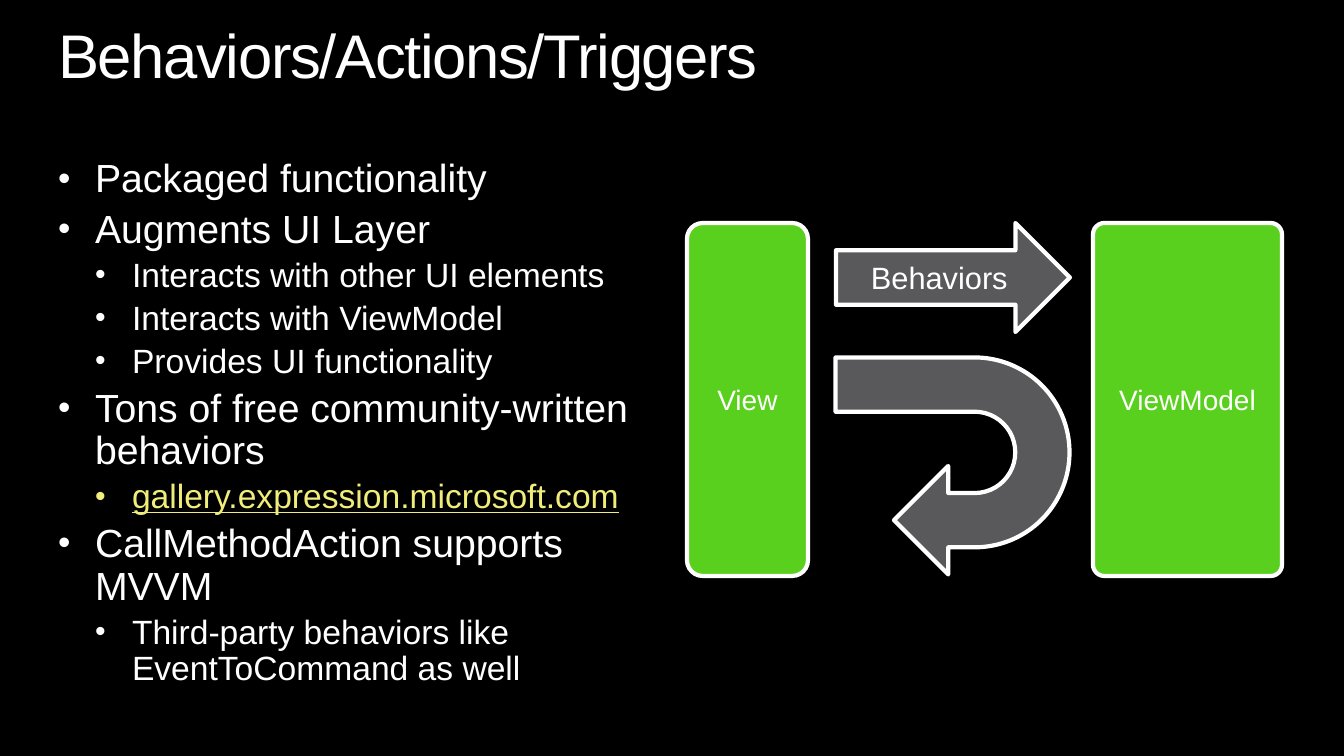
from dataclasses import dataclass

from lxml.etree import SubElement
from pptx import Presentation
from pptx.dml.color import RGBColor as Color
from pptx.enum.shapes import MSO_SHAPE as Shape
from pptx.enum.text import MSO_ANCHOR as Anchor, MSO_AUTO_SIZE as Fit, PP_ALIGN as Align
from pptx.oxml.ns import qn
from pptx.util import Emu, Pt


@dataclass(frozen=True)
class Theme:
    font: str = "Arial"
    back: str = "000000"
    text: str = "FFFFFF"
    link: str = "F0ED7B"
    layer: str = "59D01E"
    arrow: str = "59585A"
    title_size: int = 44
    list_sizes: tuple = (28, 24)
    layer_size: int = 20
    arrow_size: int = 22
    outline: int = 3


def px(length):
    return Emu(round(length * 914400 / 100.8))


def apply(target, values):
    for name, value in values.items():
        setattr(target, name, value)


class SlideBuilder:
    def __init__(self, deck, theme):
        self.theme = theme
        self.page = deck.slides.add_slide(deck.slide_layouts[1])
        fill = self.page.background.fill
        fill.solid()
        fill.fore_color.rgb = Color.from_string(theme.back)

    def place(self, item, bounds):
        apply(item, dict(zip(("left", "top", "width", "height"), map(px, bounds))))

    def style(self, font, size, color=None, **values):
        apply(font, {"name": self.theme.font, "size": Pt(size), **values})
        font.color.rgb = Color.from_string(color or self.theme.text)

    def frame(self, holder, bounds):
        self.place(holder, bounds)
        frame = holder.text_frame
        apply(frame, {"word_wrap": True, "auto_size": Fit.NONE,
                      "vertical_anchor": Anchor.TOP, "margin_left": 0,
                      "margin_top": 0, "margin_right": 0, "margin_bottom": 0})
        return frame

    def title(self, text, bounds):
        para = self.frame(self.page.shapes.title, bounds).paragraphs[0]
        apply(para, {"alignment": Align.LEFT, "line_spacing": 0.9})
        span = para.add_run()
        span.text = text
        self.style(span.font, self.theme.title_size)
        span.font._element.set("spc", "-100")

    def bullets(self, items, bounds):
        frame = self.frame(self.page.placeholders[1], bounds)
        for index, (level, text, is_link) in enumerate(items):
            para = frame.add_paragraph() if index else frame.paragraphs[0]
            size = self.theme.list_sizes[level]
            apply(para, {"level": level, "alignment": Align.LEFT, "line_spacing": 0.9,
                         "space_before": Pt(size * 0.2 if index else 0)})
            props = para._p.get_or_add_pPr()
            props.set("marL", str(px(37 * (level + 1))))
            props.set("indent", str(px(-37)))
            SubElement(props, qn("a:buSzPct"), val="90000")
            SubElement(props, qn("a:buFont"), typeface=self.theme.font)
            SubElement(props, qn("a:buChar"), char="•")
            span = para.add_run()
            span.text = text
            color = self.theme.link if is_link else self.theme.text
            self.style(span.font, size, color, underline=is_link)

    def shape(self, kind, bounds, color, text="", size=20, corner=None, turn=0):
        box = self.page.shapes.add_shape(kind, *map(px, bounds))
        box.shadow.inherit = False
        box.rotation = turn
        if corner is not None:
            box.adjustments[0] = corner
        box.fill.solid()
        box.fill.fore_color.rgb = Color.from_string(color)
        box.line.color.rgb = Color.from_string(self.theme.text)
        box.line.width = Pt(self.theme.outline)
        if text:
            box.text_frame.vertical_anchor = Anchor.MIDDLE
            para = box.text_frame.paragraphs[0]
            para.alignment = Align.CENTER
            span = para.add_run()
            span.text = text
            self.style(span.font, size)


def main():
    deck = Presentation()
    apply(deck, {"slide_width": px(1344), "slide_height": px(756)})
    theme = Theme()
    slide = SlideBuilder(deck, theme)
    slide.title("Behaviors/Actions/Triggers", (58, 25, 1229, 67))
    slide.bullets([
        (0, "Packaged functionality", False),
        (0, "Augments UI Layer", False),
        (1, "Interacts with other UI elements", False),
        (1, "Interacts with ViewModel", False),
        (1, "Provides UI functionality", False),
        (0, "Tons of free community-written behaviors", False),
        (1, "gallery.expression.microsoft.com", True),
        (0, "CallMethodAction supports MVVM", False),
        (1, "Third-party behaviors like EventToCommand as well", False),
    ], (58, 159, 605, 540))

    for text, left, width, corner in (("View", 687, 121, 0.13),
                                      ("ViewModel", 1093, 189, 0.06)):
        slide.shape(Shape.ROUNDED_RECTANGLE, (left, 223, width, 353), theme.layer,
                    text, theme.layer_size, corner)
    slide.shape(Shape.RIGHT_ARROW, (836, 223, 234, 109), theme.arrow,
                "Behaviors", theme.arrow_size)
    slide.shape(Shape.U_TURN_ARROW, (844, 349, 217, 234), theme.arrow, turn=90)
    deck.save("out.pptx")


if __name__ == "__main__":
    main()
